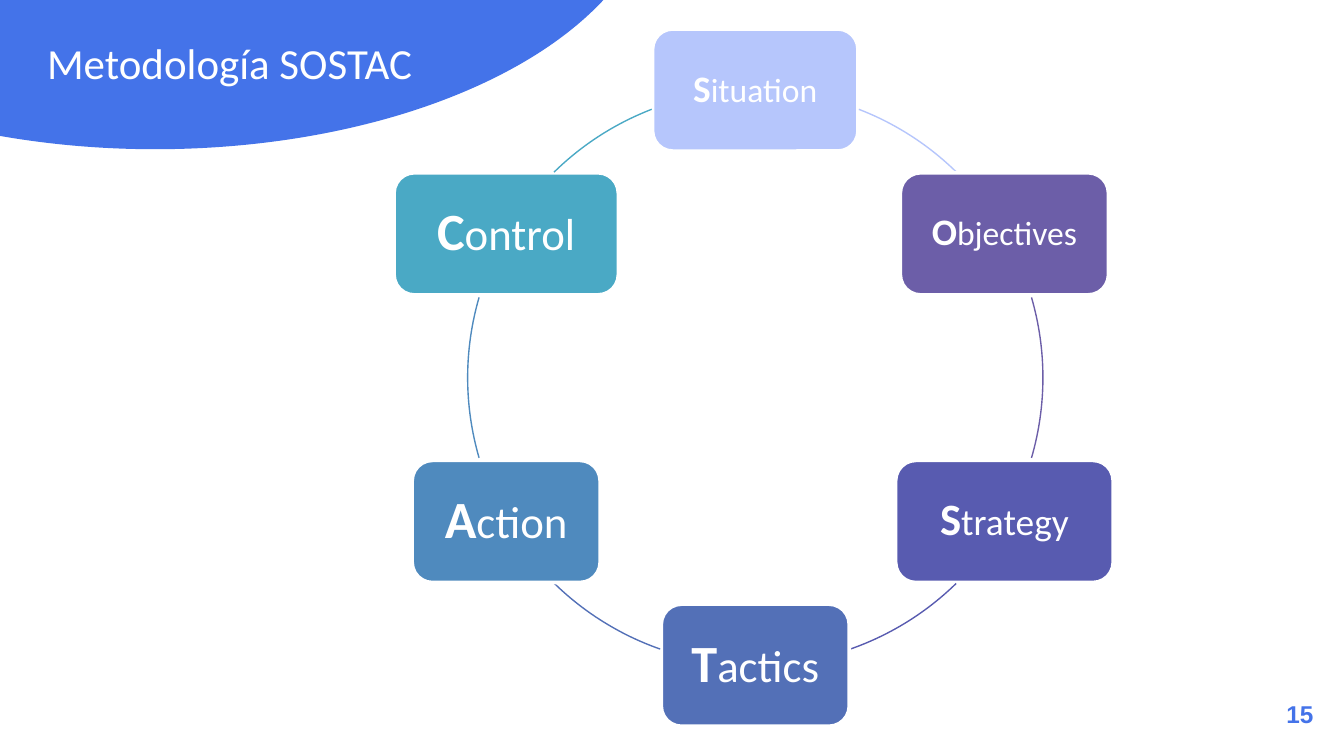
"""Build the SOSTAC methodology slide as a six-step cycle."""
from math import cos, radians, sin

from pptx import Presentation
from pptx.dml.color import RGBColor
from pptx.enum.shapes import MSO_SHAPE
from pptx.enum.text import MSO_ANCHOR, MSO_AUTO_SIZE, PP_ALIGN
from pptx.util import Inches, Pt

WHITE = RGBColor(0xFF, 0xFF, 0xFF)
BLUE = RGBColor(0x44, 0x73, 0xE9)
LILAC = RGBColor(0xB6, 0xC6, 0xFC)
PURPLE = RGBColor(0x6C, 0x5E, 0xA8)
INDIGO = RGBColor(0x58, 0x5B, 0xB0)
NAVY = RGBColor(0x53, 0x70, 0xB7)
STEEL = RGBColor(0x4F, 0x8A, 0xBE)
TEAL = RGBColor(0x4A, 0xA9, 0xC5)

MID_X, MID_Y, RADIUS = 5.62, 2.81, 2.14
HEIGHT = 0.91
STEPS = [
    ("Situation", 1.53, LILAC, 20, 18, 291.1, 314.4),
    ("Objectives", 1.55, PURPLE, 20, 18, 343.8, 16.2),
    ("Strategy", 1.62, INDIGO, 24, 20, 45.7, 70.7),
    ("Tactics", 1.4, NAVY, 28, 24, 109.3, 134.3),
    ("Action", 1.4, STEEL, 28, 24, 163.8, 196.2),
    ("Control", 1.67, TEAL, 28, 24, 225.6, 248.9),
]


def style(run, size, color, bold=False, name="Calibri"):
    font = run.font
    font.name, font.size, font.bold = name, Pt(size), bold
    font.color.rgb = color


def pad(frame, inset):
    frame.margin_left = frame.margin_right = Inches(inset)
    frame.margin_top = frame.margin_bottom = Inches(inset)
    frame.vertical_anchor = MSO_ANCHOR.MIDDLE
    frame.word_wrap = True


deck = Presentation()
deck.slide_width, deck.slide_height = Inches(10), Inches(10 * 9 / 16)
slide = deck.slides.add_slide(deck.slide_layouts[5])
shapes = slide.shapes

curve = shapes.add_shape(
    MSO_SHAPE.OVAL, Inches(-2.58), Inches(-2.93), Inches(7.47), Inches(4.04)
)
curve.shadow.inherit = False
curve.fill.solid()
curve.fill.fore_color.rgb = BLUE
curve.line.fill.background()

title = shapes.title
curve._element.addnext(title._element)
title.left, title.top = Inches(0.25), Inches(0.13)
title.width, title.height = Inches(3.45), Inches(0.67)
frame = title.text_frame
frame.text = "Metodología SOSTAC"
frame.auto_size = MSO_AUTO_SIZE.NONE
pad(frame, 0.1)
frame.paragraphs[0].alignment = PP_ALIGN.LEFT
style(frame.paragraphs[0].runs[0], 23, WHITE)

for index, (word, width, color, big, small, start, end) in enumerate(STEPS):
    angle = radians(60 * index - 90)
    left = MID_X + RADIUS * cos(angle) - width / 2
    top = MID_Y + RADIUS * sin(angle) - HEIGHT / 2
    node = shapes.add_shape(
        MSO_SHAPE.ROUNDED_RECTANGLE,
        Inches(left), Inches(top), Inches(width), Inches(HEIGHT),
    )
    node.shadow.inherit = False
    node.fill.solid()
    node.fill.fore_color.rgb = color
    node.line.color.rgb = WHITE
    node.line.width = Pt(2)
    frame = node.text_frame
    pad(frame, 0.1)
    para = frame.paragraphs[0]
    para.alignment = PP_ALIGN.CENTER
    para.line_spacing = 0.9
    for text, size, bold in ((word[0], big, True), (word[1:], small, False)):
        run = para.add_run()
        run.text = text
        style(run, size, WHITE, bold)

    arc = shapes.add_shape(
        MSO_SHAPE.ARC,
        Inches(MID_X - RADIUS), Inches(MID_Y - RADIUS),
        Inches(2 * RADIUS), Inches(2 * RADIUS),
    )
    arc.shadow.inherit = False
    arc.adjustments[0] = start * 0.6
    arc.adjustments[1] = end * 0.6
    arc.fill.background()
    arc.line.color.rgb = color
    arc.line.width = Pt(0.75)

number = shapes.add_textbox(Inches(9.27), Inches(5.1), Inches(0.6), Inches(0.43))
frame = number.text_frame
frame.text = "15"
pad(frame, 0.1)
frame.paragraphs[0].alignment = PP_ALIGN.RIGHT
style(frame.paragraphs[0].runs[0], 13, BLUE, True, "Arial")

deck.save("out.pptx")
